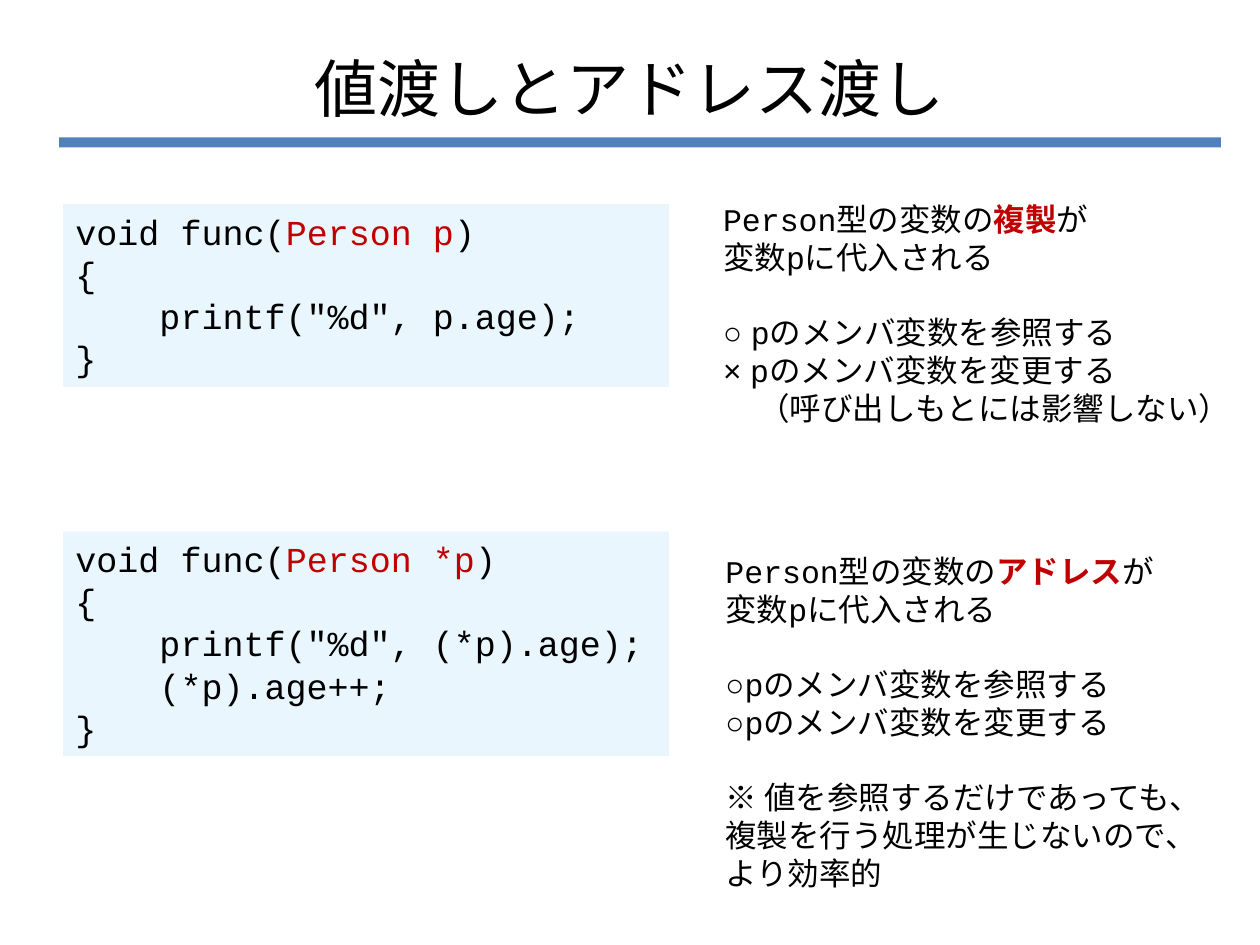
from dataclasses import dataclass

from pptx import Presentation
from pptx.dml.color import RGBColor
from pptx.enum.shapes import MSO_SHAPE as SHAPE
from pptx.enum.text import MSO_ANCHOR as ANCHOR, MSO_AUTO_SIZE as AUTO, PP_ALIGN as ALIGN
from pptx.util import Inches, Pt

SANS, MONO = "Arial", "Courier New"
BLACK, RED, BLUE, PALE = "000000", "C00000", "4F81BD", "EAF6FD"
BLANK_LINE = 21.5


@dataclass
class Run:
    text: str
    font: str = SANS
    color: str = BLACK
    bold: bool = False


@dataclass
class Line:
    runs: list[Run]
    before: float = 0
    indent: float = 0


@dataclass
class Example:
    """A code panel and the explanation to its right."""
    code_top: float
    code_height: float
    code: list[Line]
    note_box: tuple[float, float, float, float]
    note: list[Line]


def rgb(value: str) -> RGBColor:
    return RGBColor.from_string(value)


def plain(text: str, font: str = SANS, before: float = 0, indent: float = 0) -> Line:
    return Line([Run(text, font)], before, indent)


def code(parameter: str, *body: str) -> list[Line]:
    head = Line([Run("void func(", MONO), Run(parameter, MONO, RED), Run(")", MONO)])
    return [head] + [plain(text, MONO) for text in ("{", *body, "}")]


def passed(what: str) -> list[Line]:
    """Two lines telling what the parameter receives."""
    return [
        Line([Run("Person", MONO), Run("型の変数の"), Run(what, color=RED, bold=True), Run("が")]),
        Line([Run("変数"), Run("p", MONO), Run("に代入される")]),
    ]


def member(mark: str, action: str, before: float = 0) -> Line:
    return Line([Run(mark), Run("p", MONO), Run(f"のメンバ変数を{action}する")], before)


def write(tf, lines: list[Line], size: float, align=ALIGN.LEFT) -> None:
    for i, line in enumerate(lines):
        p = tf.paragraphs[0] if i == 0 else tf.add_paragraph()
        p.alignment = align
        if line.before:
            p.space_before = Pt(line.before)
        if line.indent:
            p._p.get_or_add_pPr().set("marL", str(Inches(line.indent)))
        for run in line.runs:
            r = p.add_run()
            r.text = run.text
            r.font.name, r.font.size, r.font.bold = run.font, Pt(size), run.bold
            r.font.color.rgb = rgb(run.color)


def add_panel(s, box: tuple[float, float, float, float], fill: str):
    sp = s.shapes.add_shape(SHAPE.RECTANGLE, *map(Inches, box))
    sp.shadow.inherit = False
    sp.fill.solid()
    sp.fill.fore_color.rgb = rgb(fill)
    sp.line.fill.background()
    return sp


def add_text(s, box: tuple[float, float, float, float], lines: list[Line], size: float,
             wrap: bool = False, align=ALIGN.LEFT, anchor=ANCHOR.TOP) -> None:
    tf = s.shapes.add_textbox(*map(Inches, box)).text_frame
    tf.word_wrap, tf.vertical_anchor = wrap, anchor
    write(tf, lines, size, align)


def add_example(s, example: Example) -> None:
    sp = add_panel(s, (0.5, example.code_top, 4.81, example.code_height), PALE)
    tf = sp.text_frame
    tf.word_wrap, tf.vertical_anchor = True, ANCHOR.TOP
    tf.auto_size = AUTO.SHAPE_TO_FIT_TEXT
    write(tf, example.code, 20)
    add_text(s, example.note_box, example.note, 18)


EXAMPLES = [
    Example(
        1.62, 1.45, code("Person p", '    printf("%d", p.age);'),
        (5.64, 1.54, 4.28, 1.92),
        passed("複製") + [
            member("○ ", "参照", BLANK_LINE),
            member("× ", "変更"),
            plain("（呼び出しもとには影響しない）", indent=0.28),
        ],
    ),
    Example(
        4.22, 1.78, code("Person *p", '    printf("%d", (*p).age);', "    (*p).age++;"),
        (5.66, 4.33, 4.06, 2.83),
        passed("アドレス") + [
            member("○", "参照", BLANK_LINE),
            member("○", "変更"),
            plain("※ 値を参照するだけであっても、", before=BLANK_LINE),
            plain("複製を行う処理が生じないので、"),
            plain("より効率的"),
        ],
    ),
]


def main() -> None:
    prs = Presentation()
    prs.slide_width, prs.slide_height = Inches(10), Inches(7.5)
    s = prs.slides.add_slide(prs.slide_layouts[6])
    add_panel(s, (0.47, 1.09, 9.22, 0.08), BLUE)
    add_text(s, (0.5, 0.3, 9, 0.79), [plain("値渡しとアドレス渡し")], 36,
             wrap=True, align=ALIGN.CENTER, anchor=ANCHOR.MIDDLE)
    for example in EXAMPLES:
        add_example(s, example)
    prs.save("out.pptx")


if __name__ == "__main__":
    main()
